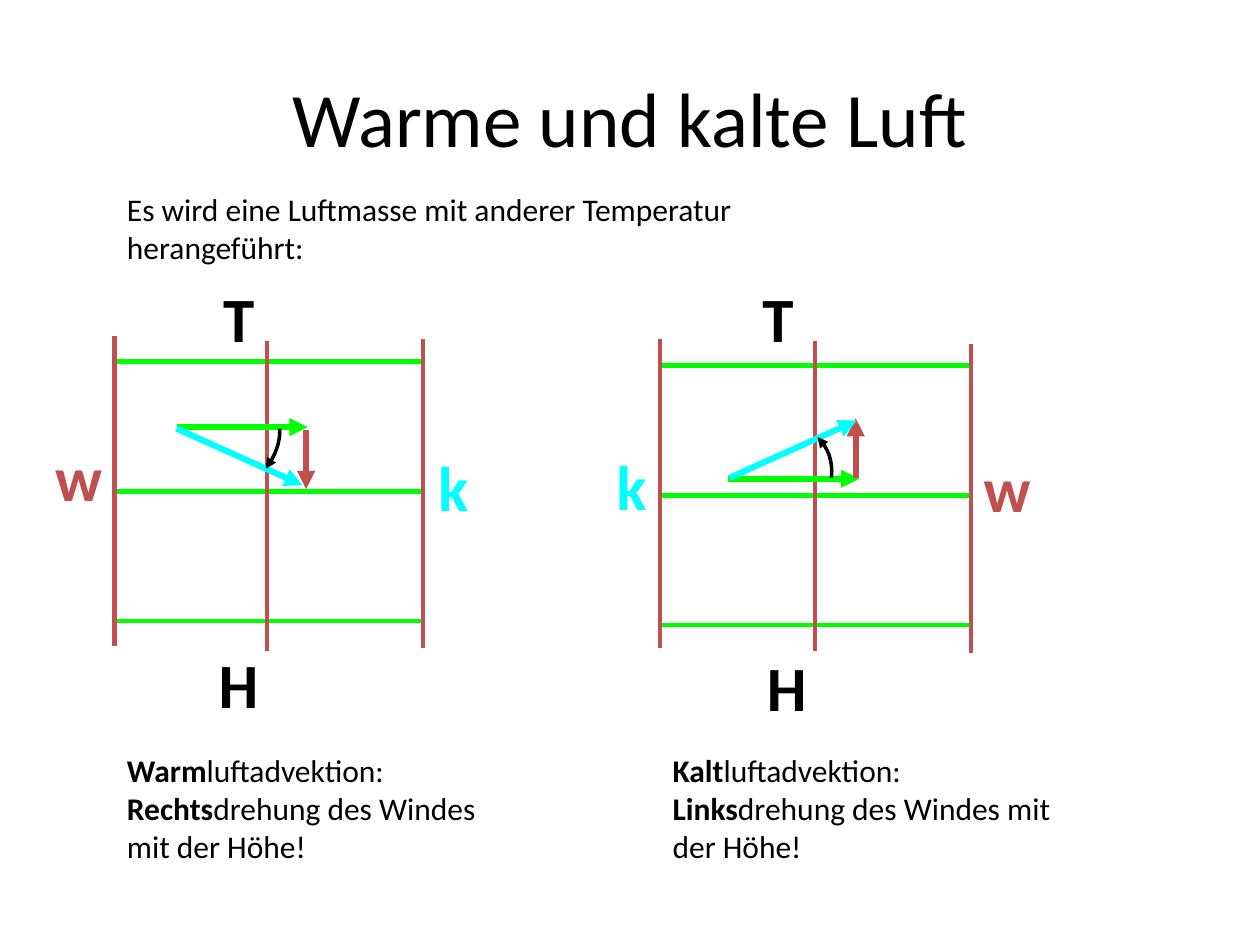
from dataclasses import dataclass

from lxml import etree
from pptx import Presentation
from pptx.dml.color import RGBColor
from pptx.enum.shapes import MSO_CONNECTOR
from pptx.enum.text import MSO_ANCHOR, PP_ALIGN
from pptx.oxml.ns import qn
from pptx.util import Cm, Pt

STRAIGHT = MSO_CONNECTOR.STRAIGHT
MIDDLE = MSO_ANCHOR.MIDDLE
LEFT, CENTER = PP_ALIGN.LEFT, PP_ALIGN.CENTER

BLACK, GREEN, RED, CYAN = "000000", "00FF00", "C0504D", "00FFFF"
FONT = "Calibri"
LETTER_WIDTHS = {"H": 1.5, "T": 1.35, "k": 1.22, "w": 1.42}
LETTER_COLORS = {"H": BLACK, "T": BLACK, "k": CYAN, "w": RED}
LETTER_HEIGHT = 1.78
ISOBAR_GAP = 2.615
ISOTHERM_LENGTH = 6.24
ARC_STEPS = 8

Point = tuple[float, float]


@dataclass
class Arrow:
    start: Point
    end: Point
    color: str


@dataclass
class Advection:
    left: float
    right: float
    isobar_top: float
    isotherm_starts: list[Point]
    letters: dict[str, Point]
    winds: list[Arrow]
    turn: tuple[Point, Point, Point]
    caption: list[tuple[str, str]]


DIAGRAMS = [
    Advection(
        left=2.31, right=8.53, isobar_top=7.29,
        isotherm_starts=[(2.31, 6.78), (5.38, 6.88), (8.53, 6.83)],
        letters={"H": (4.06, 12.88), "T": (4.14, 5.51), "k": (8.53, 8.92), "w": (0.86, 8.71)},
        winds=[
            Arrow((3.56, 8.61), (6.2, 8.61), GREEN),
            Arrow((6.17, 8.66), (6.17, 9.86), RED),
            Arrow((3.56, 8.64), (6.1, 9.78), CYAN),
        ],
        turn=((5.64, 8.64), (5.66, 9.04), (5.36, 9.45)),
        caption=[("Warm", "luftadvektion:"), ("Rechts", "drehung des Windes mit der Höhe!")],
    ),
    Advection(
        left=13.31, right=19.58, isobar_top=7.37,
        isotherm_starts=[(13.31, 6.83), (16.43, 6.88), (19.58, 6.93)],
        letters={"H": (15.11, 12.95), "T": (15.01, 5.51), "k": (12.12, 8.89), "w": (19.58, 8.94)},
        winds=[
            Arrow((14.68, 9.65), (17.32, 9.65), GREEN),
            Arrow((17.25, 9.63), (17.25, 8.43), RED),
            Arrow((14.71, 9.63), (17.27, 8.48), CYAN),
        ],
        turn=((16.76, 9.63), (16.81, 9.14), (16.48, 8.81)),
        caption=[("Kalt", "luftadvektion:"), ("Links", "drehung des Windes mit der Höhe!")],
    ),
]


def rgb(value: str) -> RGBColor:
    return RGBColor.from_string(value)


def style_line(shape, color: str, width: float, arrow: bool) -> None:
    shape.line.color.rgb = rgb(color)
    shape.line.width = Pt(width)
    if arrow:
        line = shape.line._get_or_add_ln()
        etree.SubElement(line, qn("a:tailEnd"), type="triangle")


def add_line(slide, start: Point, end: Point, color: str, width: float = 2.5,
             arrow: bool = False) -> None:
    line = slide.shapes.add_connector(STRAIGHT, *map(Cm, start + end))
    style_line(line, color, width, arrow)
    etree.SubElement(line._element.spPr, qn("a:effectLst"))


def add_arc(slide, start: Point, control: Point, end: Point) -> None:
    points = []
    for step in range(ARC_STEPS + 1):
        t = step / ARC_STEPS
        points.append(tuple(
            Cm((1 - t) ** 2 * a + 2 * t * (1 - t) * b + t ** 2 * c)
            for a, b, c in zip(start, control, end)
        ))
    builder = slide.shapes.build_freeform(*points[0])
    builder.add_line_segments(points[1:], close=False)
    arc = builder.convert_to_shape()
    arc.fill.background()
    arc.shadow.inherit = False
    style_line(arc, BLACK, 2, True)


def add_text(slide, area: tuple[float, float, float, float], lines: list[tuple[str, str]],
             size: int, color: str = BLACK, align: PP_ALIGN = LEFT, wrap: bool = True) -> None:
    box = slide.shapes.add_textbox(*map(Cm, area))
    frame = box.text_frame
    frame.word_wrap = wrap
    frame.vertical_anchor = MIDDLE
    for index, (strong, plain) in enumerate(lines):
        para = frame.paragraphs[0] if index == 0 else frame.add_paragraph()
        para.alignment = align
        for text, bold in ((strong, True), (plain, False)):
            if text:
                span = para.add_run()
                span.text = text
                span.font.name = FONT
                span.font.size = Pt(size)
                span.font.bold = bold
                span.font.color.rgb = rgb(color)


def draw_advection(slide, diagram: Advection) -> None:
    for letter, position in diagram.letters.items():
        area = (*position, LETTER_WIDTHS[letter], LETTER_HEIGHT)
        add_text(slide, area, [(letter, "")], 36, LETTER_COLORS[letter], CENTER, wrap=False)
    for row in range(3):
        y = diagram.isobar_top + row * ISOBAR_GAP
        add_line(slide, (diagram.left, y), (diagram.right, y), GREEN)
    for x, y in diagram.isotherm_starts:
        add_line(slide, (x, y), (x, y + ISOTHERM_LENGTH), RED)
    for wind in diagram.winds:
        add_line(slide, wind.start, wind.end, wind.color, 3.5, arrow=True)
    add_arc(slide, *diagram.turn)
    add_text(slide, (diagram.left, 14.83, 8.46, 2.92), diagram.caption, 18)


def main() -> None:
    deck = Presentation()
    deck.slide_width, deck.slide_height = Cm(25.4), Cm(19.05)
    slide = deck.slides.add_slide(deck.slide_layouts[6])
    add_text(slide, (1.27, 0.76, 22.86, 3.18), [("", "Warme und kalte Luft")], 44, align=CENTER)
    intro = "Es wird eine Luftmasse mit anderer Temperatur herangeführt:"
    add_text(slide, (2.31, 4.09, 16.26, 1.02), [("", intro)], 18)
    for diagram in DIAGRAMS:
        draw_advection(slide, diagram)
    deck.save("out.pptx")


if __name__ == "__main__":
    main()
